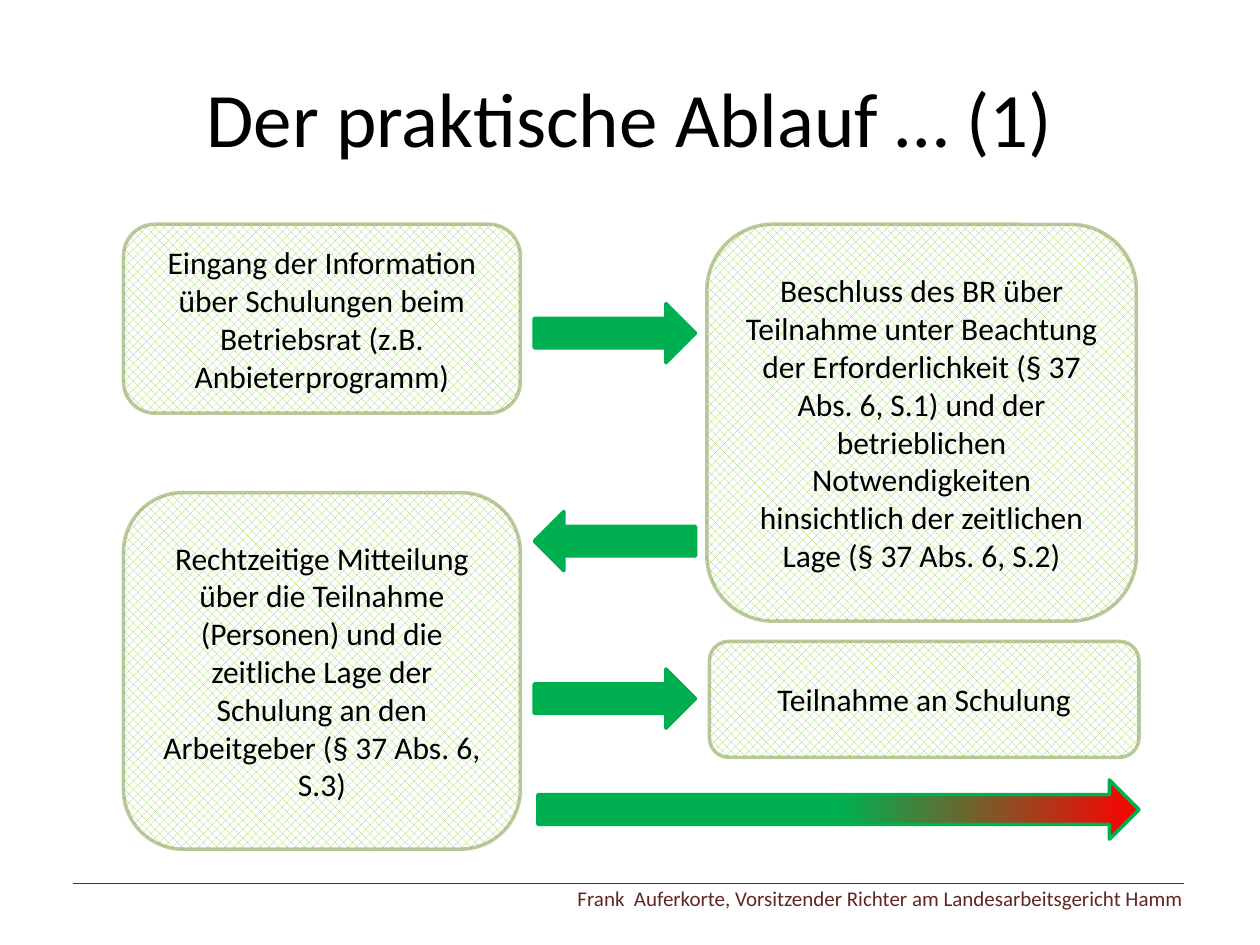
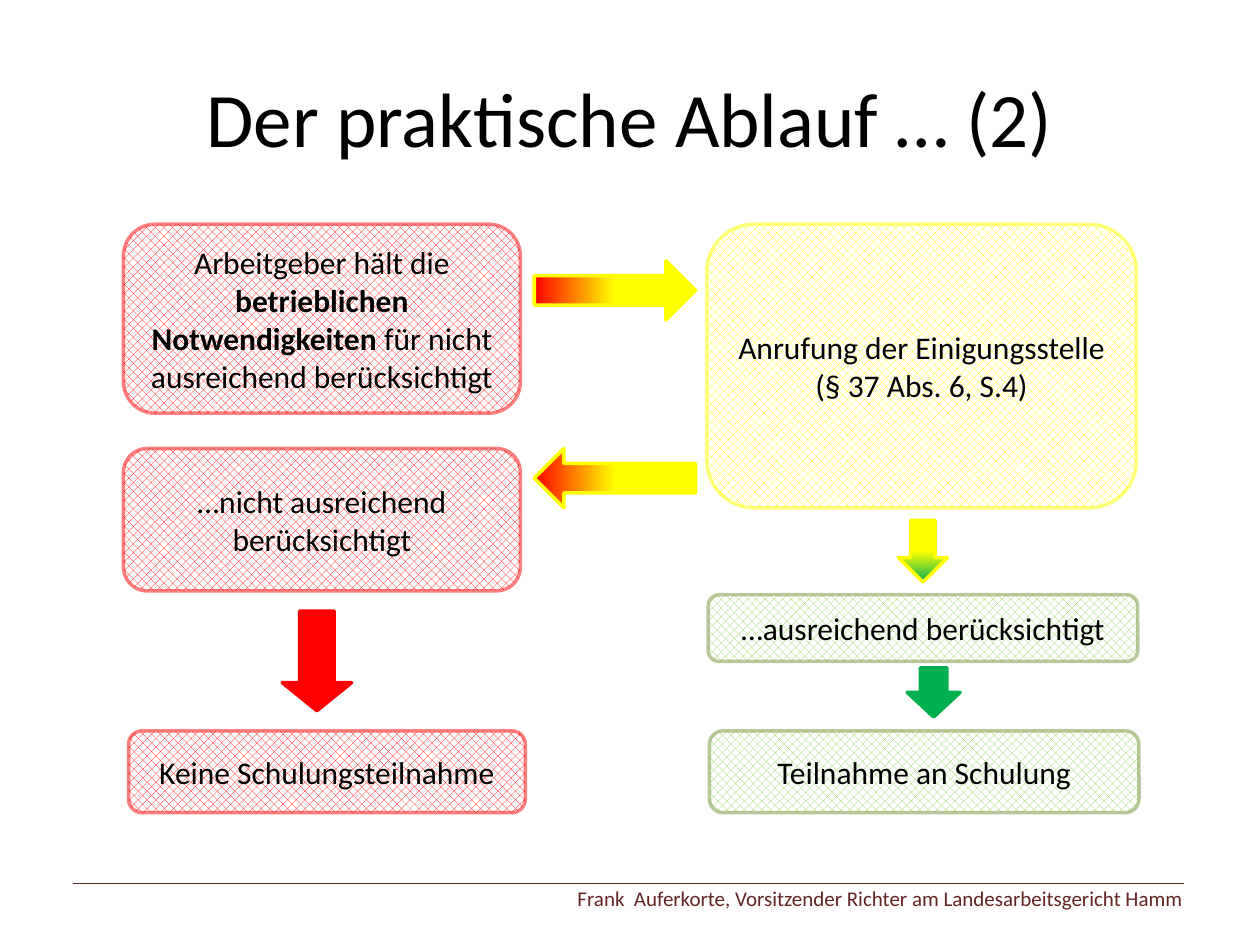
from dataclasses import dataclass
from lxml.etree import SubElement
from pptx import Presentation
from pptx.dml.color import RGBColor
from pptx.enum.dml import MSO_PATTERN
from pptx.enum.shapes import MSO_CONNECTOR, MSO_SHAPE
from pptx.enum.text import MSO_ANCHOR as Anchor, PP_ALIGN as Align
from pptx.oxml.ns import qn
from pptx.util import Inches, Pt

COLORS = {
    "white": "FFFFFF", "black": "000000", "maroon": "632523",
    "olive": "77933C", "lime": "92D050", "green": "00B050",
    "red": "FF0000", "yellow": "FFFF00",
}
BOX_STYLES = {
    "go": ("lime", "olive"),
    "stop": ("red", "red"),
    "decide": ("yellow", "yellow"),
}
FONT = "Calibri"
FOOTER = "Frank  Auferkorte, Vorsitzender Richter am Landesarbeitsgericht Hamm"
LEFT_X, LEFT_WIDTH = 0.98, 3.15
RIGHT_X, RIGHT_WIDTH = 5.61, 3.41
TOP_Y = 1.78
ARROW_X, ARROW_WIDTH, ARROW_HEIGHT = 4.24, 1.28, 0.47


@dataclass(frozen=True)
class Step:
    left: float
    top: float
    width: float
    height: float
    style: str
    spans: tuple[str, ...]


@dataclass(frozen=True)
class Arrow:
    top: float
    color: str
    left: float = ARROW_X
    width: float = ARROW_WIDTH
    height: float = ARROW_HEIGHT
    down: bool = False
    rotation: int = 0
    fade_to: str = ""
    fade_angle: int = 180
    fade_stops: tuple[int, int] = (50, 100)
    head: float = 0.5


@dataclass(frozen=True)
class Flow:
    title: str
    steps: tuple[Step, ...]
    arrows: tuple[Arrow, ...]


FLOWS = (
    Flow(
        "Der praktische Ablauf … (1)",
        (
            Step(LEFT_X, TOP_Y, LEFT_WIDTH, 1.5, "go",
                 ("Eingang der Information über Schulungen beim Betriebsrat "
                  "(z.B. Anbieterprogramm)",)),
            Step(RIGHT_X, TOP_Y, RIGHT_WIDTH, 3.15, "go",
                 ("Beschluss des BR über Teilnahme unter Beachtung der "
                  "Erforderlichkeit (§ 37 Abs. 6, S.1) und der betrieblichen "
                  "Notwendigkeiten hinsichtlich der zeitlichen Lage "
                  "(§ 37 Abs. 6, S.2)",)),
            Step(LEFT_X, 3.91, LEFT_WIDTH, 2.83, "go",
                 ("Rechtzeitige Mitteilung über die Teilnahme (Personen) und die "
                  "zeitliche Lage der Schulung an den Arbeitgeber "
                  "(§ 37 Abs. 6, S.3)",)),
            Step(5.63, 5.09, RIGHT_WIDTH, 0.92, "go", ("Teilnahme an Schulung",)),
        ),
        (
            Arrow(2.41, "green"),
            Arrow(4.06, "green", rotation=180),
            Arrow(5.31, "green"),
            Arrow(6.19, "green", left=4.27, width=4.77, fade_to="red",
                  fade_angle=0),
        ),
    ),
    Flow(
        "Der praktische Ablauf … (2)",
        (
            Step(LEFT_X, TOP_Y, LEFT_WIDTH, 1.5, "stop",
                 ("Arbeitgeber hält die ", "betrieblichen Notwendigkeiten ",
                  "für nicht ausreichend berücksichtigt")),
            Step(RIGHT_X, TOP_Y, RIGHT_WIDTH, 2.25, "decide",
                 ("Anrufung der Einigungsstelle (§ 37 Abs. 6, S.4)",)),
            Step(LEFT_X, 3.56, LEFT_WIDTH, 1.13, "stop",
                 ("…nicht ausreichend berücksichtigt",)),
            Step(5.62, 4.72, RIGHT_WIDTH, 0.53, "go",
                 ("…ausreichend berücksichtigt",)),
            Step(1.02, 5.8, LEFT_WIDTH, 0.65, "stop", ("Keine Schulungsteilnahme",)),
            Step(5.63, 5.8, RIGHT_WIDTH, 0.65, "go", ("Teilnahme an Schulung",)),
        ),
        (
            Arrow(2.07, "yellow", fade_to="red"),
            Arrow(3.56, "yellow", rotation=180, fade_to="red", fade_angle=0),
            Arrow(4.85, "red", left=2.24, width=0.55, height=0.79, down=True,
                  head=0.404),
            Arrow(4.13, "yellow", left=7.13, width=0.39, height=0.49, down=True,
                  fade_to="green", fade_angle=270),
            Arrow(5.3, "green", left=7.2, width=0.42, height=0.39, down=True),
        ),
    ),
)


def rgb(name: str) -> RGBColor:
    return RGBColor.from_string(COLORS[name])


def place(item) -> tuple:
    return tuple(Inches(n) for n in (item.left, item.top, item.width, item.height))


def write(frame, *spans: str, size: int = 18, color: str = "black",
          align=Align.CENTER, anchor=Anchor.MIDDLE) -> None:
    frame.word_wrap = True
    frame.vertical_anchor = anchor
    para = frame.paragraphs[0]
    para.alignment = align
    for index, text in enumerate(spans):
        span = para.add_run()
        span.text = text
        span.font.name = FONT
        span.font.size = Pt(size)
        span.font.bold = index % 2 == 1
        span.font.color.rgb = rgb(color)


def add_outlined(page, kind, item, color: str):
    shape = page.shapes.add_shape(kind, *place(item))
    shape.shadow.inherit = False
    shape.line.color.rgb = rgb(color)
    shape.line.width = Pt(2)
    return shape


def add_step(page, step: Step) -> None:
    hatch, edge = BOX_STYLES[step.style]
    box = add_outlined(page, MSO_SHAPE.ROUNDED_RECTANGLE, step, edge)
    box.fill.patterned()
    box.fill.pattern = MSO_PATTERN.PERCENT_50
    box.fill.fore_color.rgb = rgb(hatch)
    box.fill.back_color.rgb = rgb("white")
    edge_color = box.line._ln.find(".//" + qn("a:srgbClr"))
    SubElement(edge_color, qn("a:alpha"), val="50000")
    write(box.text_frame, *step.spans)


def fade(shape, stops: list[tuple[int, str]], angle: int) -> None:
    shape.fill.gradient()
    shape.fill.gradient_angle = angle
    stop_list = shape._element.spPr.find(".//" + qn("a:gsLst"))
    stop_list.clear()
    for position, color in stops:
        stop = SubElement(stop_list, qn("a:gs"), pos=str(position * 1000))
        SubElement(stop, qn("a:srgbClr"), val=COLORS[color])


def add_arrow(page, arrow: Arrow) -> None:
    kind = MSO_SHAPE.DOWN_ARROW if arrow.down else MSO_SHAPE.RIGHT_ARROW
    shape = add_outlined(page, kind, arrow, arrow.color)
    shape.rotation = arrow.rotation
    shape.adjustments[1] = arrow.head
    if arrow.fade_to:
        middle, end = arrow.fade_stops
        stops = [(0, arrow.color), (middle, arrow.color), (end, arrow.fade_to)]
        fade(shape, stops, arrow.fade_angle)
    else:
        shape.fill.solid()
        shape.fill.fore_color.rgb = rgb(arrow.color)


def add_footer(page) -> None:
    box = page.shapes.add_textbox(Inches(0.75), Inches(6.98), Inches(8.74), Inches(0.3))
    write(box.text_frame, FOOTER, size=12, color="maroon", align=Align.RIGHT,
          anchor=Anchor.TOP)
    rule = page.shapes.add_connector(
        MSO_CONNECTOR.STRAIGHT, Inches(0.58), Inches(7.01), Inches(9.4), Inches(7.01))
    rule.line.color.rgb = rgb("maroon")
    rule.line.width = Pt(0.75)
    SubElement(rule._element.spPr, qn("a:effectLst"))


def add_flow(deck, flow: Flow) -> None:
    page = deck.slides.add_slide(deck.slide_layouts[5])
    title = page.shapes.title
    title.left, title.top = Inches(0.5), Inches(0.3)
    title.width, title.height = Inches(9), Inches(1.25)
    write(title.text_frame, flow.title, size=44)
    add_footer(page)
    for step in flow.steps:
        add_step(page, step)
    for arrow in flow.arrows:
        add_arrow(page, arrow)


def main() -> None:
    deck = Presentation()
    deck.slide_width, deck.slide_height = Inches(10), Inches(7.5)
    for flow in FLOWS:
        add_flow(deck, flow)
    deck.save("out.pptx")


if __name__ == "__main__":
    main()
